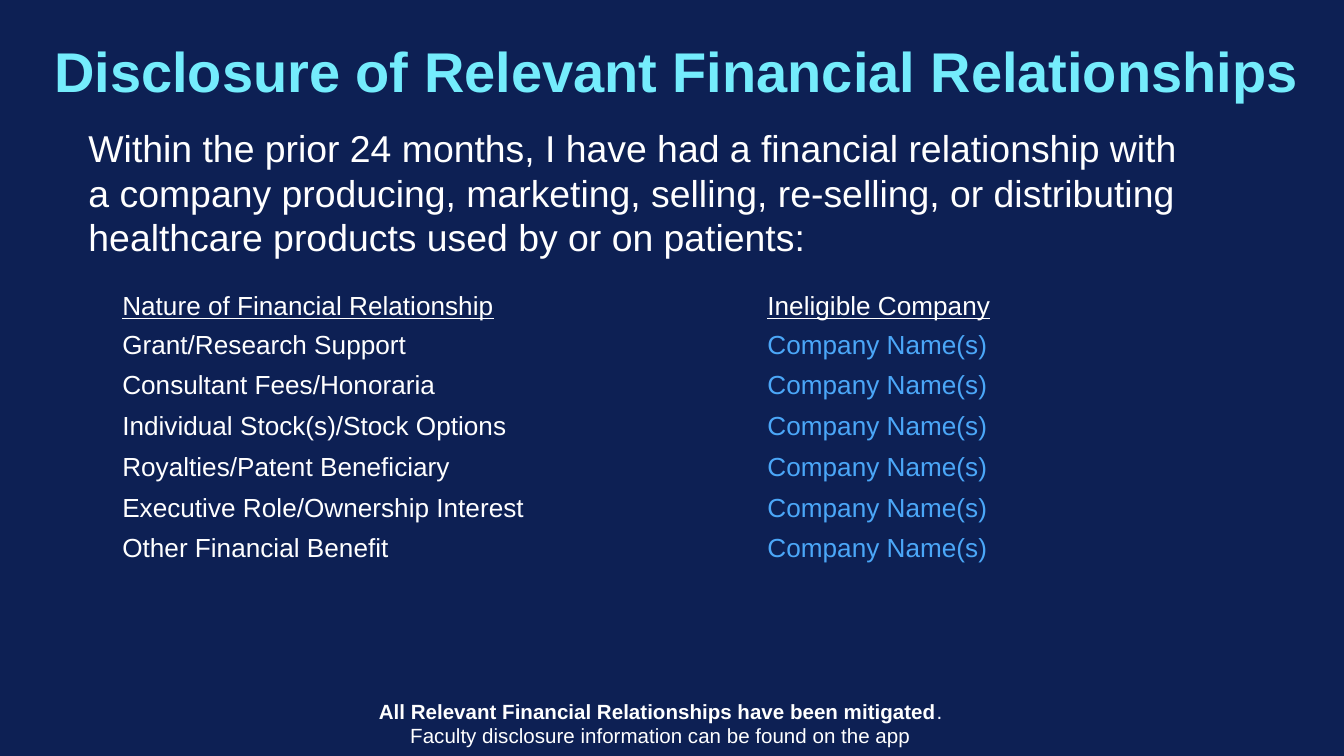
import pptx
import pptx.dml.color
import pptx.enum.text
import pptx.util

Inches = pptx.util.Inches
Pt = pptx.util.Pt
RGBColor = pptx.dml.color.RGBColor
CENTER = pptx.enum.text.PP_ALIGN.CENTER

NAVY = RGBColor(0x0D, 0x20, 0x54)
CYAN = RGBColor(0x74, 0xEC, 0xFC)
BLUE = RGBColor(0x4B, 0xA7, 0xF8)
WHITE = RGBColor(0xFF, 0xFF, 0xFF)

NO_GRID_STYLE = "{2D5ABB26-0587-4C30-8999-92F81FD0307C}"
COMPANY = "Company Name(s)"
RELATIONSHIPS = [
    "Grant/Research Support",
    "Consultant Fees/Honoraria",
    "Individual Stock(s)/Stock Options",
    "Royalties/Patent Beneficiary",
    "Executive Role/Ownership Interest",
    "Other Financial Benefit",
]


def style_paragraph(paragraph, size, color=WHITE, bold=None):
    paragraph.font.name = "Arial"
    paragraph.font.size = Pt(size)
    paragraph.font.color.rgb = color
    paragraph.font.bold = bold


def add_text_frame(slide, left, top, width, height, wrap=True):
    box = slide.shapes.add_textbox(
        Inches(left), Inches(top), Inches(width), Inches(height))
    box.text_frame.word_wrap = wrap
    return box.text_frame


# Heading across the top
def add_title(slide, left, top, width, height):
    frame = add_text_frame(slide, left, top, width, height)
    frame.margin_left = frame.margin_right = Inches(0.05)
    paragraph = frame.paragraphs[0]
    paragraph.text = "Disclosure of Relevant Financial Relationships"
    paragraph.alignment = CENTER
    style_paragraph(paragraph, 30, CYAN, bold=True)


# Introductory sentence
def add_statement(slide, left, top, width, height):
    paragraph = add_text_frame(slide, left, top, width, height).paragraphs[0]
    paragraph.add_run().text = (
        "Within the prior 24 months, I have had a financial relationship with")
    paragraph.add_line_break()
    paragraph.add_run().text = (
        "a company producing, marketing, selling, re-selling, or distributing "
        "healthcare products used by or on patients:")
    style_paragraph(paragraph, 20)


# Relationships and companies; rows grow to fit their text
def add_relationship_table(slide, left, top, column_widths, height, row_height):
    rows = [("Nature of Financial Relationship", "Ineligible Company")]
    rows += [(relationship, COMPANY) for relationship in RELATIONSHIPS]
    frame = slide.shapes.add_table(
        len(rows), len(column_widths), Inches(left), Inches(top),
        Inches(sum(column_widths)), Inches(height))
    table = frame.table
    table.first_row = table.horz_banding = False
    table._tbl.tblPr[0].text = NO_GRID_STYLE

    for column, width in zip(table.columns, column_widths):
        column.width = Inches(width)
    for row_index, texts in enumerate(rows):
        table.rows[row_index].height = Inches(row_height)
        is_header = row_index == 0
        for column_index, text in enumerate(texts):
            cell = table.cell(row_index, column_index)
            cell.fill.background()
            cell.margin_left = cell.margin_right = Inches(0.07)
            cell.margin_top = cell.margin_bottom = Pt(2.5)
            if is_header:
                cell.vertical_anchor = pptx.enum.text.MSO_ANCHOR.BOTTOM
            paragraph = cell.text_frame.paragraphs[0]
            paragraph.text = text
            is_company = column_index == 1 and not is_header
            style_paragraph(paragraph, 14, BLUE if is_company else WHITE)
            paragraph.font.underline = is_header
    frame.height = Inches(height)


# Closing note
def add_footer(slide, left, top, width, height):
    frame = add_text_frame(slide, left, top, width, height, wrap=False)
    mitigation = frame.paragraphs[0]
    statement = mitigation.add_run()
    statement.text = "All Relevant Financial Relationships have been mitigated"
    statement.font.bold = True
    mitigation.add_run().text = "."
    app_note = frame.add_paragraph()
    app_note.text = "Faculty disclosure information can be found on the app"
    for paragraph in frame.paragraphs:
        paragraph.alignment = CENTER
        style_paragraph(paragraph, 11)


def main():
    presentation = pptx.Presentation()
    presentation.slide_width = Inches(10)
    presentation.slide_height = presentation.slide_width * 9 // 16
    slide = presentation.slides.add_slide(presentation.slide_layouts[6])
    slide.background.fill.solid()
    slide.background.fill.fore_color.rgb = NAVY

    add_statement(slide, 0.56, 0.88, 9.02, 1.09)
    add_relationship_table(slide, 0.84, 2.12, (4.8, 3.34), 2.16, 0.25)
    add_footer(slide, 2.71, 5.15, 4.41, 0.47)
    add_title(slide, 0.32, 0.22, 9.43, 0.47)
    presentation.save("out.pptx")


if __name__ == "__main__":
    main()
